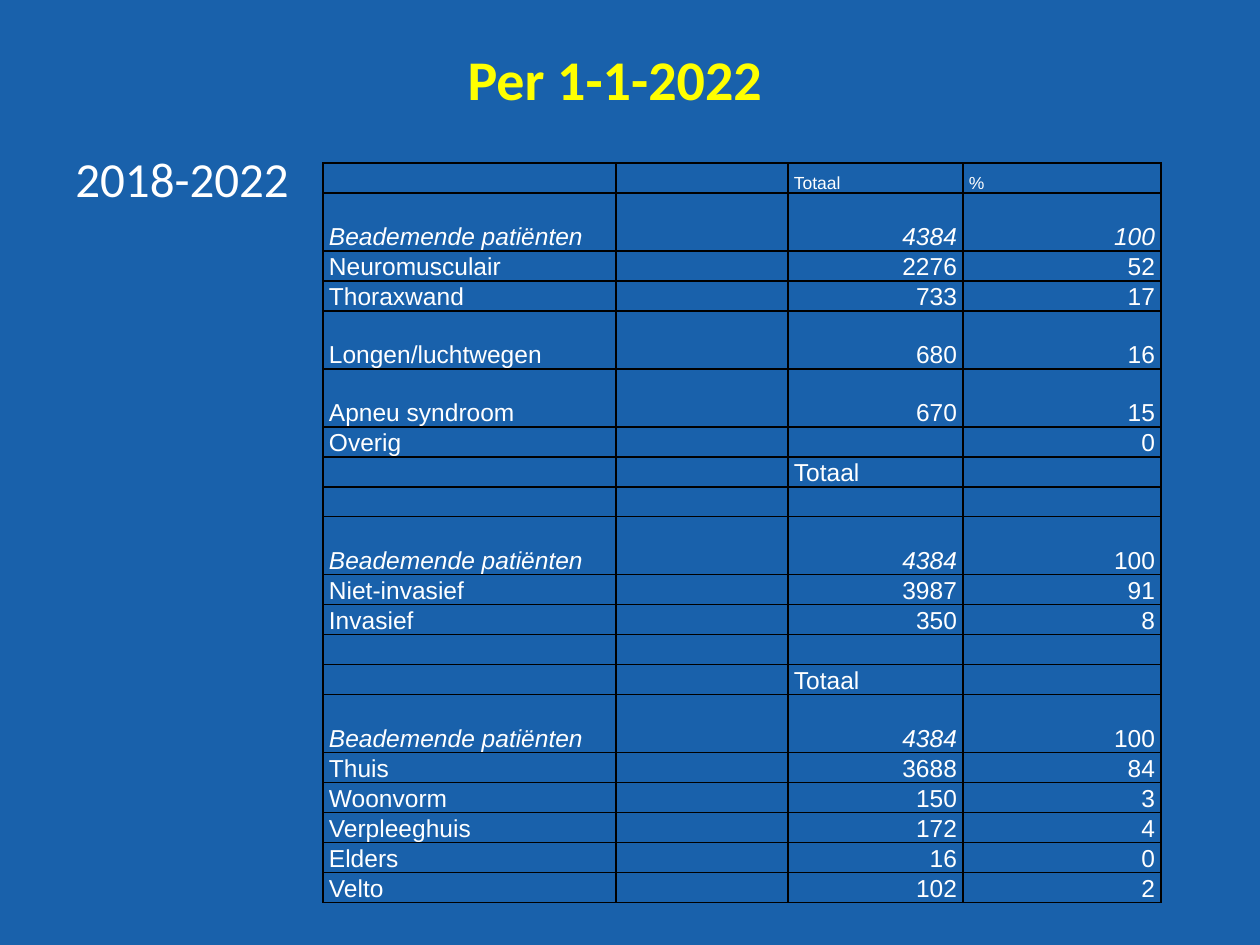
from lxml import etree
from pptx import Presentation
from pptx.dml.color import RGBColor
from pptx.enum.text import MSO_ANCHOR, PP_ALIGN
from pptx.oxml.ns import qn
from pptx.util import Emu, Pt

TOP, BOTTOM = MSO_ANCHOR.TOP, MSO_ANCHOR.BOTTOM
LEFT, RIGHT = PP_ALIGN.LEFT, PP_ALIGN.RIGHT

COLOURS = {"background": "1961AB", "title": "FFFF00", "text": "FFFFFF", "border": "000000"}
TITLE = "Per 1-1-2022"
PERIOD = "2018-2022"
PATIENTS = "Beademende patiënten"
ROWS = [
    ("", "", "Totaal", "%"),
    (PATIENTS, "", "4384", "100"),
    ("Neuromusculair", "", "2276", "52"),
    ("Thoraxwand", "", "733", "17"),
    ("Longen/luchtwegen", "", "680", "16"),
    ("Apneu syndroom", "", "670", "15"),
    ("Overig", "", "", "0"),
    ("", "", "Totaal", ""),
    ("", "", "", ""),
    (PATIENTS, "", "4384", "100"),
    ("Niet-invasief", "", "3987", "91"),
    ("Invasief", "", "350", "8"),
    ("", "", "", ""),
    ("", "", "Totaal", ""),
    (PATIENTS, "", "4384", "100"),
    ("Thuis", "", "3688", "84"),
    ("Woonvorm", "", "150", "3"),
    ("Verpleeghuis", "", "172", "4"),
    ("Elders", "", "16", "0"),
    ("Velto", "", "102", "2"),
]
TALL_LABELS = {PATIENTS, "Longen/luchtwegen", "Apneu syndroom"}
COLUMN_WIDTHS = [293, 172, 175, 198]
SHORT_ROW, TALL_ROW = 30, 58
PERCENT_COLUMN = 3
FIRST_PATIENTS_ROW = 1


def px(length):
    return Emu(round(length * 914400 / 126))


def colour(name):
    return RGBColor.from_string(COLOURS[name])


def set_font(paragraph, face, size, colour_name, bold=False, italic=False):
    font = paragraph.font
    font.name, font.size = face, Pt(size)
    font.bold, font.italic = bold, italic
    font.color.rgb = colour(colour_name)


def add_borders(cell):
    properties = cell._tc.get_or_add_tcPr()
    for position, side in enumerate(("lnL", "lnR", "lnT", "lnB")):
        line = etree.Element(qn(f"a:{side}"), w=str(Pt(1)))
        fill = etree.SubElement(line, qn("a:solidFill"))
        etree.SubElement(fill, qn("a:srgbClr"), val=COLOURS["border"])
        properties.insert(position, line)


def fill_cell(cell, text, size, italic):
    cell.fill.background()
    cell.margin_left = cell.margin_right = px(6)
    cell.margin_top = cell.margin_bottom = 0
    cell.vertical_anchor = BOTTOM
    add_borders(cell)
    cell.text = text
    paragraph = cell.text_frame.paragraphs[0]
    paragraph.alignment = RIGHT if text.isdigit() else LEFT
    set_font(paragraph, "Arial", size, "text", italic=italic)
    if not text:
        etree.SubElement(paragraph._p, qn("a:endParaRPr"), sz=str(size * 100))


def add_patient_table(slide):
    heights = [TALL_ROW if row[0] in TALL_LABELS else SHORT_ROW for row in ROWS]
    table = slide.shapes.add_table(
        len(ROWS), len(COLUMN_WIDTHS), px(323), px(163),
        px(sum(COLUMN_WIDTHS)), px(sum(heights))).table
    table.first_row = table.horz_banding = False
    for column, width in zip(table.columns, COLUMN_WIDTHS):
        column.width = px(width)
    for r, (values, height) in enumerate(zip(ROWS, heights)):
        table.rows[r].height = px(height)
        for c, text in enumerate(values):
            italic = values[0] == PATIENTS and (c < PERCENT_COLUMN or r == FIRST_PATIENTS_ROW)
            fill_cell(table.cell(r, c), text, 10 if r == 0 else 14, italic)


def main():
    presentation = Presentation()
    presentation.slide_width, presentation.slide_height = px(1260), px(945)
    slide = presentation.slides.add_slide(presentation.slide_layouts[5])
    slide.background.fill.solid()
    slide.background.fill.fore_color.rgb = colour("background")

    period = slide.shapes.add_textbox(px(63), px(142), px(260), px(72))
    period.text_frame.word_wrap = True
    period.text_frame.text = PERIOD
    set_font(period.text_frame.paragraphs[0], "Calibri", 28, "text")

    add_patient_table(slide)

    title = slide.shapes.title
    title.left, title.top, title.width, title.height = px(455), px(38), px(706), px(81)
    title.text_frame.text = TITLE
    title.text_frame.vertical_anchor = TOP
    heading = title.text_frame.paragraphs[0]
    heading.alignment = LEFT
    set_font(heading, "Calibri", 32, "title", bold=True)

    presentation.save("out.pptx")


if __name__ == "__main__":
    main()
